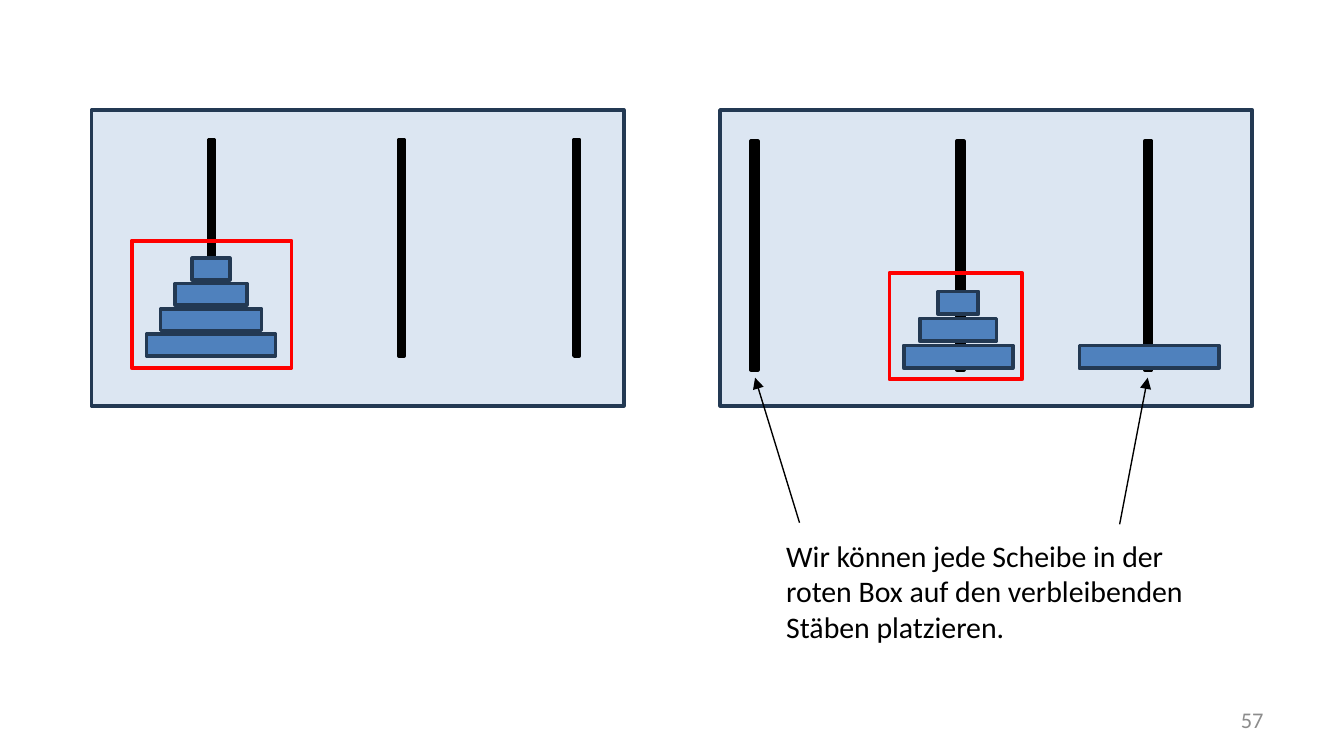
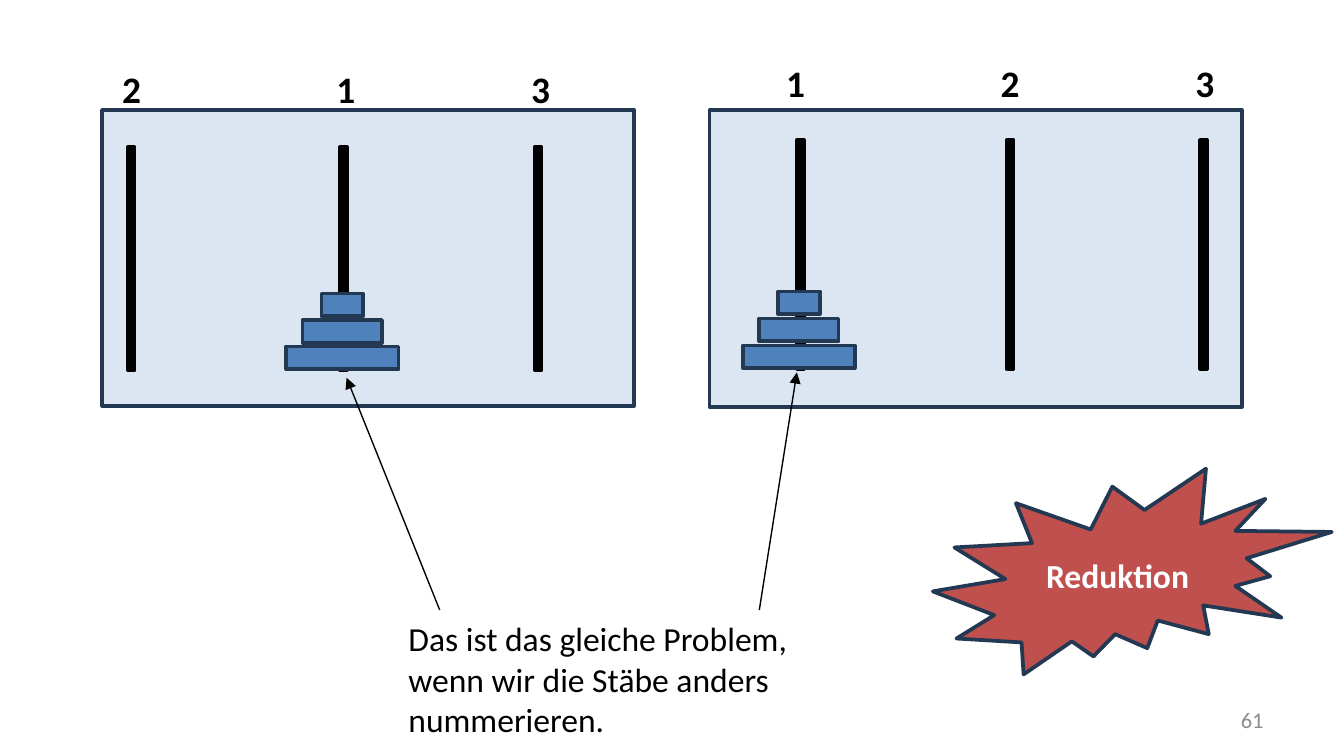
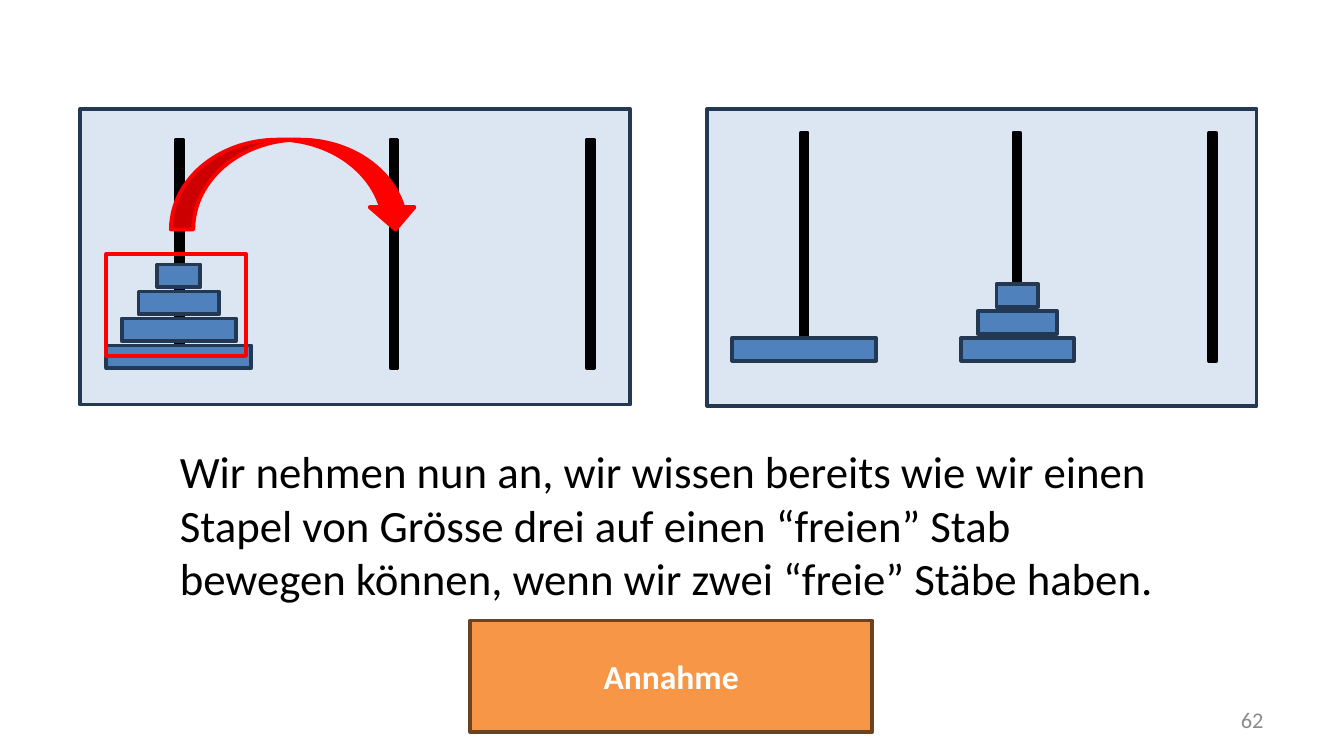
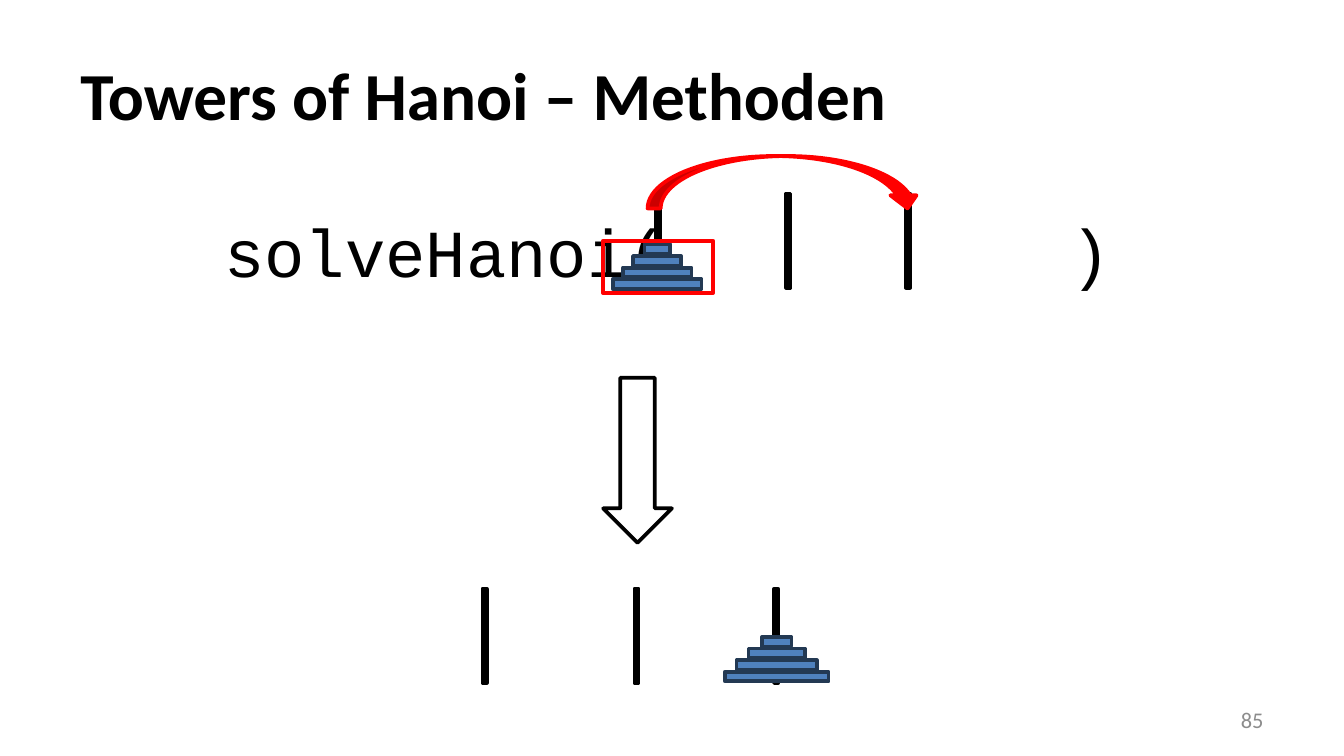
import lxml.etree
import pptx
import pptx.dml.color
import pptx.enum.shapes
import pptx.enum.text
import pptx.oxml.ns
import pptx.util

Cm = pptx.util.Cm
Pt = pptx.util.Pt
SHAPE = pptx.enum.shapes.MSO_SHAPE
ALIGN = pptx.enum.text.PP_ALIGN
ANCHOR = pptx.enum.text.MSO_ANCHOR

BLACK = "000000"
WHITE = "FFFFFF"
GREY = "8C8C8C"
RED = "FF0000"
NAVY = "233953"
BOARD_BLUE = "DCE6F2"
DISC_BLUE = "4F81BD"
BRICK = "C0504D"
ORANGE = "F79646"
BROWN = "6C421F"


def color(value):
    return pptx.dml.color.RGBColor.from_string(value)


def add_xml(parent, tag, **attributes):
    return lxml.etree.SubElement(parent, pptx.oxml.ns.qn(tag), **attributes)


def write_text(shape, text, size=18, font="Calibri", ink=BLACK, bold=False,
               align=ALIGN.LEFT, anchor=ANCHOR.TOP, spacing=None, tabs=()):
    frame = shape.text_frame
    frame.word_wrap = True
    frame.vertical_anchor = anchor
    paragraph = frame.paragraphs[0]
    paragraph.alignment = align
    if spacing is not None:
        paragraph.space_before = paragraph.space_after = Pt(spacing)
    if tabs:
        tab_list = add_xml(paragraph._p.get_or_add_pPr(), "a:tabLst")
        for position in tabs:
            add_xml(tab_list, "a:tab", pos=str(Cm(position)), algn="l")
    run = paragraph.add_run()
    run.text = text
    run.font.size = Pt(size)
    run.font.name = font
    run.font.bold = bold
    run.font.color.rgb = color(ink)


class Deck:
    line_width = 2
    arrow_width = 0.75

    def __init__(self):
        self.presentation = pptx.Presentation()
        self.presentation.slide_width = Cm(25.4)
        self.presentation.slide_height = Cm(14.29)
        self.slide = None

    def new_slide(self, number):
        layout = self.presentation.slide_layouts[6]
        self.slide = self.presentation.slides.add_slide(layout)
        self.text((18.21, 13.23, 5.92, 0.76), str(number), size=12, ink=GREY,
                  align=ALIGN.RIGHT, anchor=ANCHOR.MIDDLE)

    def text(self, area, text, **text_format):
        shape = self.slide.shapes.add_textbox(*map(Cm, area))
        write_text(shape, text, **text_format)

    def shape(self, area, fill=None, line=BLACK, kind=SHAPE.RECTANGLE, group=None):
        parent = group or self.slide
        shape = parent.shapes.add_shape(kind, *map(Cm, area))
        shape.shadow.inherit = False
        if fill:
            shape.fill.solid()
            shape.fill.fore_color.rgb = color(fill)
        else:
            shape.fill.background()
        shape.line.color.rgb = color(line)
        shape.line.width = Pt(self.line_width)
        return shape

    def caption_shape(self, area, text, **style):
        shape = self.shape(area, **style)
        write_text(shape, text, ink=WHITE, bold=True,
                   align=ALIGN.CENTER, anchor=ANCHOR.MIDDLE)

    def red_box(self, area):
        self.shape(area, line=RED)

    def move_arrow(self, area):
        self.shape(area, fill=RED, line=RED, kind=SHAPE.CURVED_DOWN_ARROW)

    def arrow(self, start, end):
        connector = self.slide.shapes.add_connector(
            pptx.enum.shapes.MSO_CONNECTOR.STRAIGHT, *map(Cm, start + end))
        connector.line.color.rgb = color(BLACK)
        connector.line.width = Pt(self.arrow_width)
        add_xml(connector.line._get_or_add_ln(), "a:tailEnd", type="triangle")
        add_xml(connector._element.spPr, "a:effectLst")

    def towers(self, rods, rod_top, stacks, disc_top, board=None, rod_height=4.32,
               rod_width=0.13, disc_height=0.43, pitch=0.51):
        group = self.slide.shapes.add_group_shape()
        if board:
            self.shape(board, fill=BOARD_BLUE, line=NAVY, group=group)
        for center in rods:
            self.shape((center - rod_width / 2, rod_top, rod_width, rod_height),
                       fill=BLACK, group=group)
        for center, widths in stacks:
            for level, width in enumerate(widths):
                self.shape((center - width / 2, disc_top - level * pitch,
                            width, disc_height),
                           fill=DISC_BLUE, line=NAVY, group=group)


def free_rods_slide(deck):
    deck.new_slide(57)
    deck.towers(board=(1.73, 2.08, 10.06, 5.59), rods=(3.99, 7.59, 10.9),
                rod_top=2.64, rod_height=4.09, rod_width=0.1,
                stacks=[(3.99, (2.44, 1.91, 1.35, 0.71))],
                disc_top=6.32, disc_height=0.41, pitch=0.48)
    deck.red_box((2.49, 4.55, 3.02, 2.41))
    deck.towers(board=(13.61, 2.08, 10.06, 5.59), rods=(14.26, 18.15, 21.7),
                rod_top=2.67, disc_top=6.53,
                stacks=[(21.72, (2.64,)), (18.11, (2.06, 1.45, 0.76))])
    deck.red_box((16.81, 5.16, 2.51, 2.01))
    deck.arrow((15.11, 9.88), (14.27, 7.14))
    deck.arrow((21.16, 9.91), (21.69, 7.14))
    deck.text((14.61, 10.03, 8.41, 2.31),
              "Wir können jede Scheibe in der roten Box auf den verbleibenden "
              "Stäben platzieren.", size=16)


def reduction_slide(deck):
    deck.new_slide(61)
    deck.towers(board=(1.93, 2.08, 10.06, 5.59), rods=(2.48, 6.49, 10.17),
                rod_top=2.78, rod_height=4.22, disc_top=6.55, pitch=0.5,
                stacks=[(6.47, (2.13, 1.5, 0.79))])
    deck.towers(board=(13.41, 2.08, 10.06, 5.61), rods=(15.13, 19.09, 22.75),
                rod_top=2.65, disc_top=6.53,
                stacks=[(15.1, (2.11, 1.5, 0.79))])
    for left, top, rod_numbers in ((2.06, 1.12, "2\t1\t3"), (14.61, 1.02, "1\t2\t3")):
        deck.text((left, top, 8.64, 1.12), rod_numbers, size=20, bold=True,
                  tabs=(4.05, 7.73))
    deck.arrow((8.31, 11.53), (6.55, 7.14))
    deck.arrow((14.35, 11.53), (15.06, 7.04))
    deck.text((7.47, 11.56, 9.14, 2.57),
              "Das ist das gleiche Problem, wenn wir die Stäbe anders nummerieren.")
    deck.caption_shape((17.63, 8.86, 7.54, 3.89), "Reduktion",
                       fill=BRICK, line=NAVY, kind=SHAPE.EXPLOSION2)


def assumption_slide(deck):
    deck.new_slide(62)
    deck.towers(board=(1.52, 2.06, 10.39, 5.59), rods=(3.39, 7.45, 11.16),
                rod_top=2.64, disc_top=6.53,
                stacks=[(3.38, (2.74, 2.16, 1.52, 0.81))])
    deck.towers(board=(13.36, 2.06, 10.39, 5.61), rods=(15.2, 19.22, 22.92),
                rod_top=2.51, disc_top=6.39,
                stacks=[(15.2, (2.72,)), (19.23, (2.13, 1.5, 0.79))])
    deck.red_box((2.01, 4.8, 2.64, 1.93))
    deck.move_arrow((3.23, 2.64, 4.67, 1.7))
    deck.text((3.15, 8.26, 19.1, 3.33),
              "Wir nehmen nun an, wir wissen bereits wie wir einen Stapel von "
              "Grösse drei auf einen “freien” Stab bewegen können, wenn wir zwei "
              "“freie” Stäbe haben.", size=24)
    deck.caption_shape((8.89, 11.73, 7.59, 2.11), "Annahme", fill=ORANGE, line=BROWN)


def methods_slide(deck):
    small = {"rod_height": 1.78, "rod_width": 0.08, "disc_height": 0.18, "pitch": 0.22}
    deck.new_slide(85)
    deck.text((1.27, 0.58, 22.86, 2.39), "Towers of Hanoi – Methoden",
              size=36, bold=True, anchor=ANCHOR.MIDDLE)
    deck.text((3.99, 3.86, 17.42, 4.39), "solveHanoi(\t)", size=36,
              font="Courier New", spacing=3, tabs=(16,))
    deck.towers(rods=(12.43, 14.9, 17.16), rod_top=3.66, disc_top=5.28,
                stacks=[(12.42, (1.68, 1.3, 0.91, 0.48))], **small)
    deck.shape((11.4, 7.14, 1.3, 3.12), kind=SHAPE.DOWN_ARROW)
    deck.towers(rods=(9.16, 12.03, 14.67), rod_top=11.13, disc_top=12.7,
                stacks=[(14.68, (1.96, 1.52, 1.07, 0.56))], **small)
    deck.move_arrow((12.24, 2.95, 5.16, 0.99))
    deck.red_box((11.4, 4.55, 2.08, 0.99))


def main():
    deck = Deck()
    free_rods_slide(deck)
    reduction_slide(deck)
    assumption_slide(deck)
    methods_slide(deck)
    deck.presentation.save("out.pptx")


if __name__ == "__main__":
    main()
